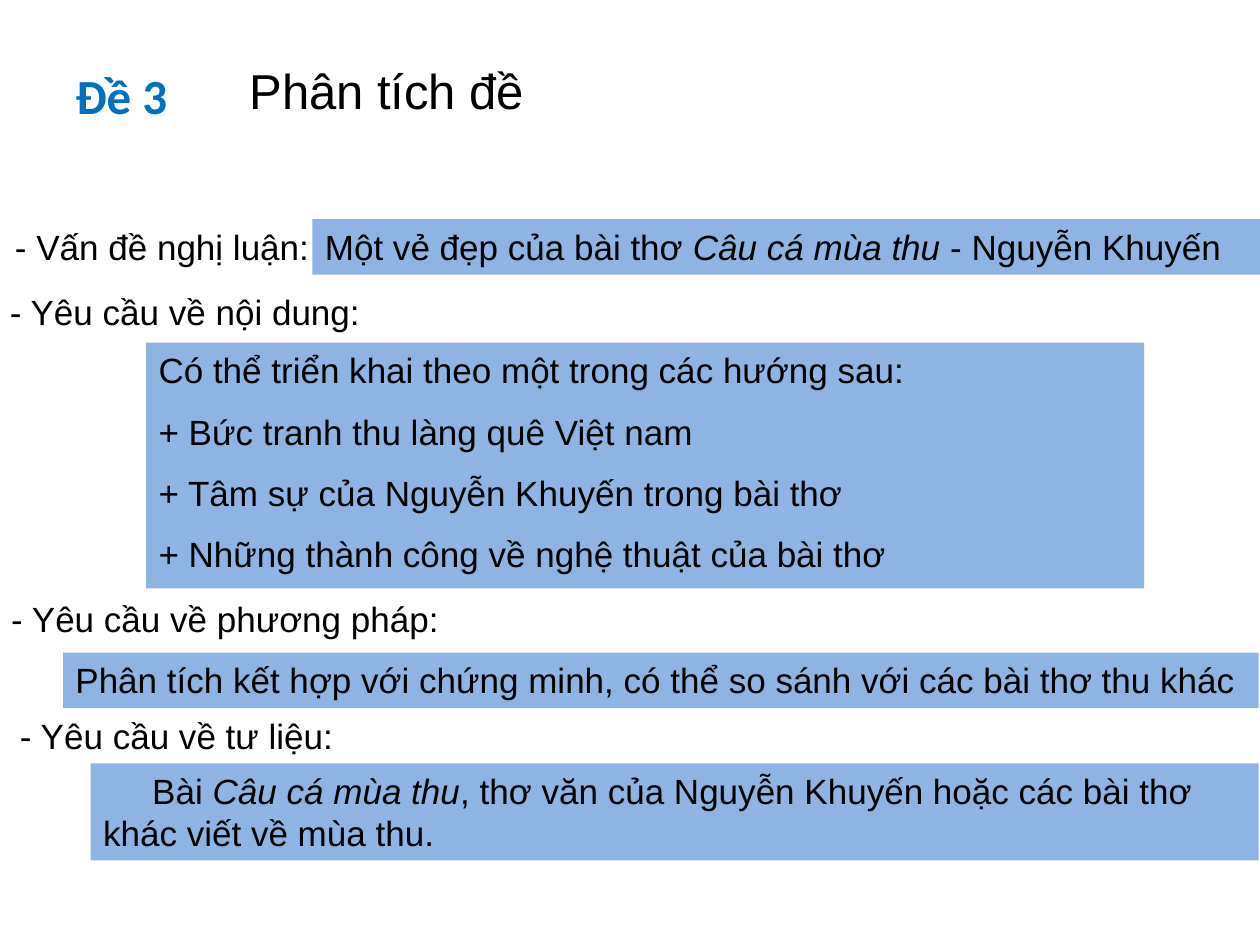
import pptx
import pptx.dml.color
import pptx.enum.text
import pptx.util
from pptx.util import Inches, Pt

BLACK, BLUE, WHITE, PALE_BLUE = "000000", "0070C0", "FFFFFF", "8EB4E3"
POEM = "Câu cá mùa thu"

# Each entry: (left, top, width, height), paragraphs; the poem's title is set in italics.
LABELS = [
    ((0.02, 1.74, 2.82, 0.44), ["- Vấn đề nghị luận:"]),
    ((-0.02, 2.26, 3.96, 0.44), ["- Yêu cầu về nội dung:"]),
    ((-0.01, 4.69, 3.94, 0.44), ["- Yêu cầu về phương pháp:"]),
    ((0.06, 5.62, 2.75, 0.44), ["- Yêu cầu về tư liệu:"]),
]
ANSWERS = [
    ((1.16, 2.72, 7.92, 1.95), [
        "Có thể triển khai theo một trong các hướng sau:",
        "+ Bức tranh thu làng quê Việt nam",
        "+ Tâm sự của Nguyễn Khuyến trong bài thơ",
        "+ Những thành công về nghệ thuật của bài thơ",
    ]),
    ((2.48, 1.74, 7.52, 0.44), [f"Một vẻ đẹp của bài thơ {POEM} - Nguyễn Khuyến"]),
    ((0.5, 5.18, 9.49, 0.44),
     ["Phân tích kết hợp với chứng minh, có thể so sánh với các bài thơ thu khác"]),
]
SOURCES = ((0.72, 6.06, 9.27, 0.77),
           [f"Bài {POEM}, thơ văn của Nguyễn Khuyến hoặc các bài thơ khác viết về mùa thu."])


def color(value):
    return pptx.dml.color.RGBColor.from_string(value)


def add_runs(para, text):
    before, poem, after = text.partition(POEM)
    for part in filter(None, (before, poem, after)):
        span = para.add_run()
        span.text = part
        if part == POEM:
            span.font.italic = True


def add_text(page, area, paragraphs, fill=None, size=20, font="Arial", ink=BLACK, bold=False):
    box = page.shapes.add_textbox(*map(Inches, area))
    if fill:
        box.fill.solid()
        box.fill.fore_color.rgb = color(fill)
    frame = box.text_frame
    frame.word_wrap = True
    for index, text in enumerate(paragraphs):
        para = frame.add_paragraph() if index else frame.paragraphs[0]
        if index:
            para.space_before = Pt(11)
        add_runs(para, text)
        para.font.size = Pt(size)
        para.font.name = font
        para.font.bold = bold
        para.font.color.rgb = color(ink)
    return box


def main():
    deck = pptx.Presentation()
    deck.slide_width, deck.slide_height = Inches(10), Inches(7.5)
    page = deck.slides.add_slide(deck.slide_layouts[6])

    title = add_text(page, (0.5, 0.43, 8.1, 0.64), ["Đề 3"], WHITE, 28, "Calibri", BLUE, True)
    title.text_frame.vertical_anchor = pptx.enum.text.MSO_ANCHOR.MIDDLE

    for fill, entries in ((WHITE, LABELS), (PALE_BLUE, ANSWERS)):
        for area, paragraphs in entries:
            add_text(page, area, paragraphs, fill)

    sources = add_text(page, *SOURCES, PALE_BLUE)
    first_line = sources.text_frame.paragraphs[0]
    first_line._p.get_or_add_pPr().set("indent", str(Inches(0.39)))

    heading = add_text(page, (1.61, 0.43, 2.92, 0.57), ["Phân tích đề"], size=28)
    heading.text_frame.paragraphs[0].alignment = pptx.enum.text.PP_ALIGN.CENTER

    deck.save("out.pptx")


if __name__ == "__main__":
    main()
